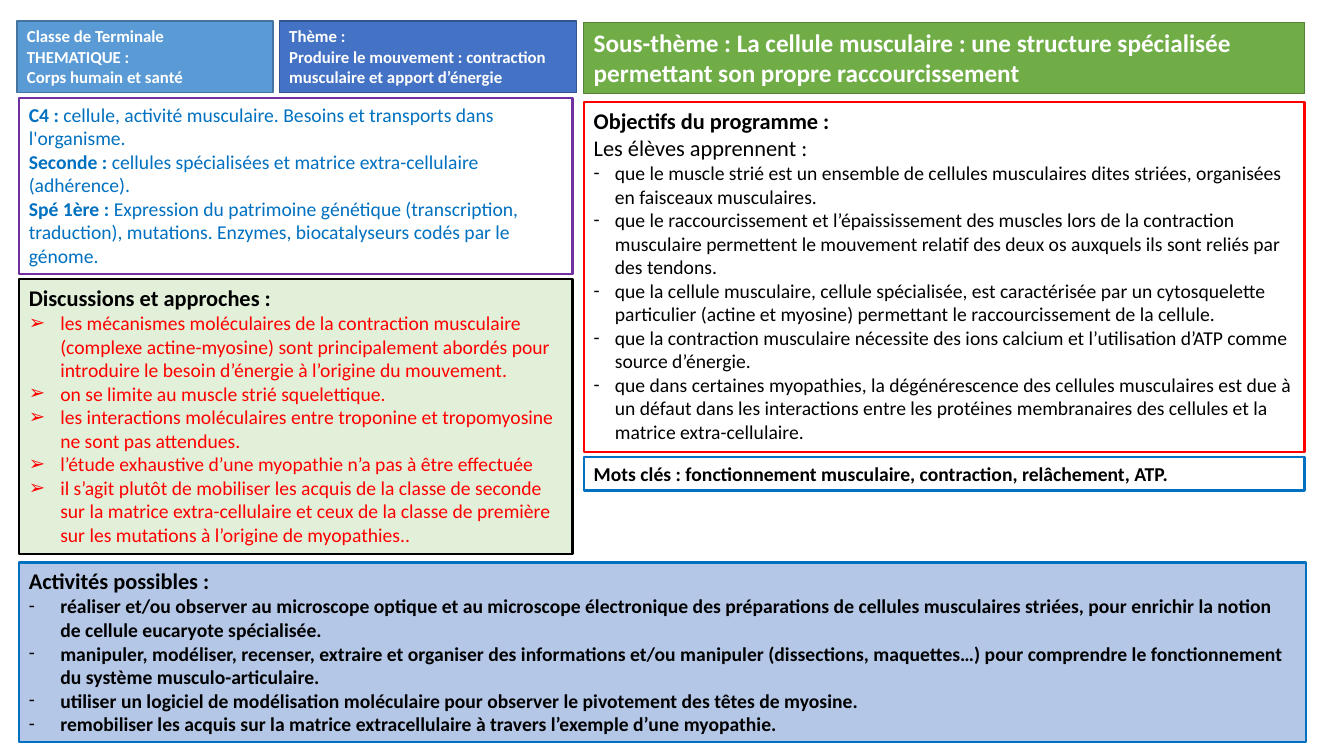
from lxml import etree
from pptx import Presentation
from pptx.dml.color import RGBColor
from pptx.enum import shapes, text
from pptx.oxml import ns
from pptx.util import Pt

FONT = "Calibri"
WHITE = RGBColor(0xFF, 0xFF, 0xFF)
BLACK = RGBColor(0, 0, 0)
RED = RGBColor(0xFF, 0, 0)
BLUE = RGBColor(0x00, 0x70, 0xC0)
PURPLE = RGBColor(0x70, 0x30, 0xA0)
SKY = RGBColor(0x5B, 0x9B, 0xD5)
SKY_EDGE = RGBColor(0x43, 0x73, 0x9E)
ROYAL = RGBColor(0x44, 0x72, 0xC4)
ROYAL_EDGE = RGBColor(0x32, 0x54, 0x91)
GREEN = RGBColor(0x70, 0xAD, 0x47)
GREEN_EDGE = RGBColor(0x53, 0x80, 0x35)
PALE_GREEN = RGBColor(0xE2, 0xF0, 0xD9)
PALE_BLUE = RGBColor(0xB4, 0xC7, 0xE7)

CLASS_LINES = ["Classe de Terminale", "THEMATIQUE :", "Corps humain et santé"]
THEME_LINES = [
    "Thème :",
    "Produire le mouvement : contraction musculaire et apport d’énergie",
]
SUBTHEME = ("Sous-thème : La cellule musculaire : une structure spécialisée "
            "permettant son propre raccourcissement")
PRIOR_KNOWLEDGE = [
    ("C4 : ", "cellule, activité musculaire. Besoins et transports dans l'organisme."),
    ("Seconde : ", "cellules spécialisées et matrice extra-cellulaire (adhérence)."),
    ("Spé 1ère : ", "Expression du patrimoine génétique (transcription, traduction), "
     "mutations. Enzymes, biocatalyseurs codés par le génome."),
]
OBJECTIVES = [
    "que le muscle strié est un ensemble de cellules musculaires dites striées, "
    "organisées en faisceaux musculaires.",
    "que le raccourcissement et l’épaississement des muscles lors de la contraction "
    "musculaire permettent le mouvement relatif des deux os auxquels ils sont reliés "
    "par des tendons.",
    "que la cellule musculaire, cellule spécialisée, est caractérisée par un "
    "cytosquelette particulier (actine et myosine) permettant le raccourcissement "
    "de la cellule.",
    "que la contraction musculaire nécessite des ions calcium et l’utilisation d’ATP "
    "comme source d’énergie.",
    "que dans certaines myopathies, la dégénérescence des cellules musculaires est due "
    "à un défaut dans les interactions entre les protéines membranaires des cellules "
    "et la matrice extra-cellulaire.",
]
DISCUSSIONS = [
    "les mécanismes moléculaires de la contraction musculaire (complexe actine-myosine) "
    "sont principalement abordés pour introduire le besoin d’énergie à l’origine du "
    "mouvement.",
    "on se limite au muscle strié squelettique.",
    "les interactions moléculaires entre troponine et tropomyosine ne sont pas attendues.",
    "l’étude exhaustive d’une myopathie n’a pas à être effectuée",
    "il s’agit plutôt de mobiliser les acquis de la classe de seconde sur la matrice "
    "extra-cellulaire et ceux de la classe de première sur les mutations à l’origine "
    "de myopathies..",
]
ACTIVITIES = [
    "réaliser et/ou observer au microscope optique et au microscope électronique des "
    "préparations de cellules musculaires striées, pour enrichir la notion de cellule "
    "eucaryote spécialisée.",
    "manipuler, modéliser, recenser, extraire et organiser des informations et/ou "
    "manipuler (dissections, maquettes…) pour comprendre le fonctionnement du système "
    "musculo-articulaire.",
    "utiliser un logiciel de modélisation moléculaire pour observer le pivotement des "
    "têtes de myosine.",
    "remobiliser les acquis sur la matrice extracellulaire à travers l’exemple d’une "
    "myopathie.",
]
KEYWORDS = "Mots clés : fonctionnement musculaire, contraction, relâchement, ATP."


def line(content, size=14, color=BLACK, bold=True, **layout):
    """Describe a paragraph made of one span."""
    return {"spans": [(content, size, color, bold)], **layout}


def items(contents, bullet, indent, color=BLACK, bold=False):
    """Describe a bulleted list."""
    return [line(content, 14, color, bold, bullet=bullet, indent=indent)
            for content in contents]


# Columns and rows, in points
LEFT, LEFT_WIDTH = 13.5, 395.5
RIGHT, RIGHT_WIDTH = 417, 514.8
HEADER_TOP, HEADER_HEIGHT = 15.1, 50.9

# (left, top, width, height), fill, edge, edge width, paragraphs
PANELS = [
    ((12.2, HEADER_TOP, 183, HEADER_HEIGHT), SKY, SKY_EDGE, 1,
     [line(row, 12, WHITE) for row in CLASS_LINES]),
    ((RIGHT, 16, RIGHT_WIDTH, HEADER_HEIGHT), GREEN, GREEN_EDGE, 1,
     [line(SUBTHEME, 18, WHITE)]),
    ((199.5, HEADER_TOP, 212.5, HEADER_HEIGHT), ROYAL, ROYAL_EDGE, 1,
     [line(row, 12, WHITE) for row in THEME_LINES]),
    ((RIGHT, 73.1, RIGHT_WIDTH, 249.8), None, RED, 1.5,
     [line("Objectifs du programme :", 16, justify=True),
      line("Les élèves apprennent :", 16, bold=False, justify=True),
      *items(OBJECTIVES, "-", 15.1)]),
    ((LEFT, 69.8, LEFT_WIDTH, 126), None, PURPLE, 1.5,
     [{"spans": [(level, 14, BLUE, True), (topics, 14, BLUE, False)]}
      for level, topics in PRIOR_KNOWLEDGE]),
    ((LEFT, 199.4, LEFT_WIDTH, 196.6), PALE_GREEN, BLACK, 1.5,
     [line("Discussions et approches :", 16),
      *items(DISCUSSIONS, "➢", 22.5, RED)]),
    ((LEFT, 401.8, 919.5, 128.2), PALE_BLUE, BLUE, 1.5,
     [line("Activités possibles :", 16),
      *items(ACTIVITIES, "-", 22.5, bold=True)]),
    ((RIGHT, 326.2, RIGHT_WIDTH, 24.2), None, BLUE, 1.5, [line(KEYWORDS)]),
]


def set_format(target, values):
    """Set each attribute of target from a dict."""
    for name, value in values.items():
        setattr(target, name, value)


def add_bullet(para, mark, indent):
    """Give a paragraph a bullet mark with a hanging indent."""
    props = para._p.get_or_add_pPr()
    props.set("marL", str(Pt(indent)))
    props.set("indent", str(-Pt(indent)))
    etree.SubElement(props, ns.qn("a:buFont"), typeface=FONT)
    etree.SubElement(props, ns.qn("a:buChar"), char=mark)


def write_para(para, entry):
    """Fill a paragraph with its spans and layout."""
    para.alignment = (text.PP_ALIGN.JUSTIFY if entry.get("justify")
                      else text.PP_ALIGN.LEFT)
    if "bullet" in entry:
        add_bullet(para, entry["bullet"], entry["indent"])
    for content, size, color, bold in entry["spans"]:
        span = para.add_run()
        span.text = content
        set_format(span.font, {"name": FONT, "size": Pt(size), "bold": bold})
        span.font.color.rgb = color


def add_panel(page, bounds, fill, edge, edge_width, entries):
    """Draw a framed rectangle with its paragraphs."""
    box = page.shapes.add_shape(shapes.MSO_SHAPE.RECTANGLE, *map(Pt, bounds))
    box.shadow.inherit = False
    if fill is None:
        box.fill.background()
    else:
        box.fill.solid()
        box.fill.fore_color.rgb = fill
    box.line.color.rgb = edge
    box.line.width = Pt(edge_width)
    frame = box.text_frame
    set_format(frame, {"word_wrap": True,
                       "vertical_anchor": text.MSO_ANCHOR.TOP,
                       "auto_size": text.MSO_AUTO_SIZE.SHAPE_TO_FIT_TEXT})
    for index, entry in enumerate(entries):
        write_para(frame.add_paragraph() if index else frame.paragraphs[0], entry)


deck = Presentation()
set_format(deck, {"slide_width": Pt(960), "slide_height": Pt(540)})
page = deck.slides.add_slide(deck.slide_layouts[6])
for panel in PANELS:
    add_panel(page, *panel)
deck.save("out.pptx")
